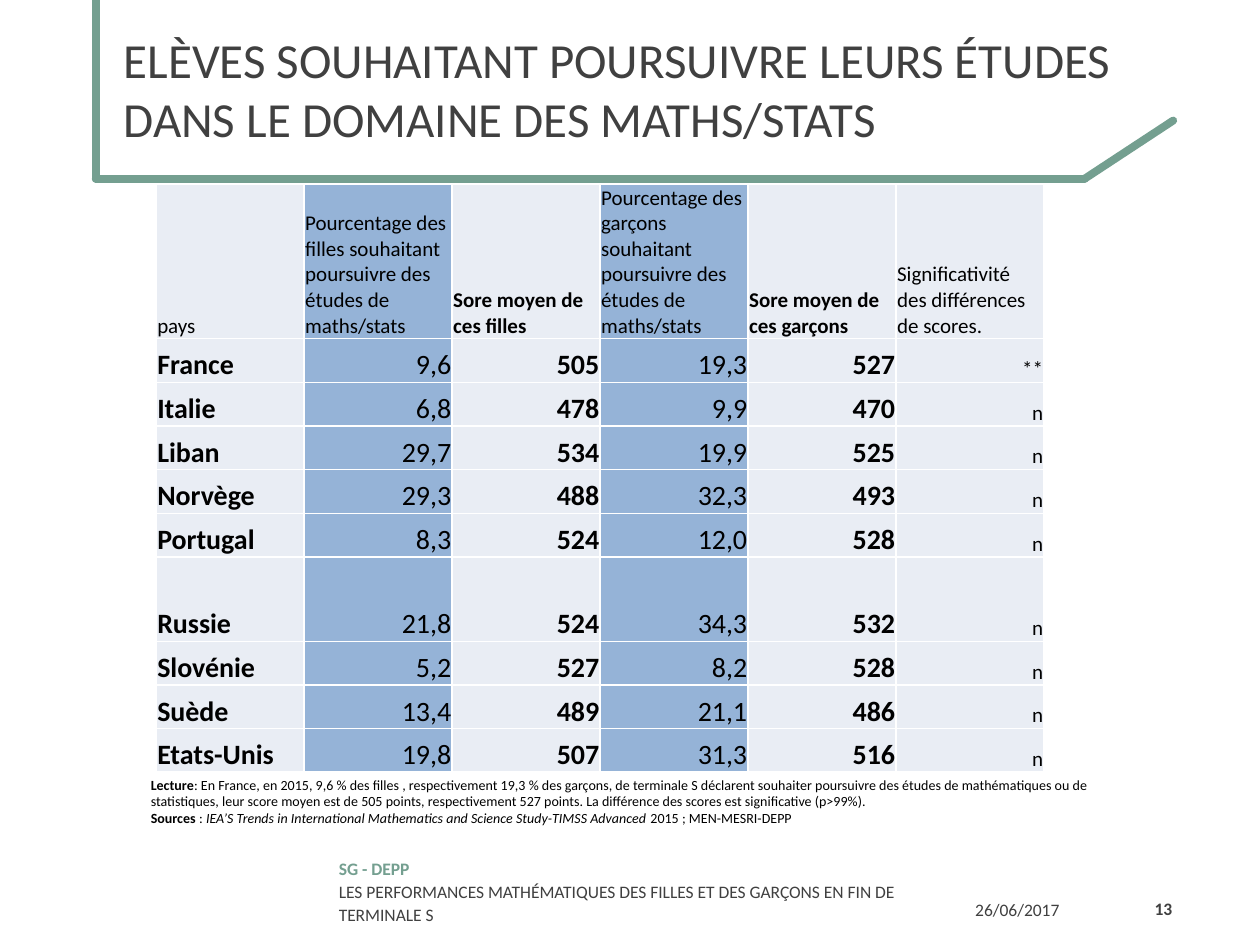
from lxml.etree import SubElement
from pptx import Presentation
from pptx.dml.color import RGBColor
from pptx.enum.shapes import MSO_CONNECTOR
from pptx.enum.text import MSO_ANCHOR, MSO_AUTO_SIZE, PP_ALIGN
from pptx.oxml.ns import qn
from pptx.util import Cm, Pt

COLORS = {
    "accent": "749F90",
    "grey": "404040",
    "black": "000000",
    "white": "FFFFFF",
    "pale": "E9EDF4",
    "blue": "95B3D7",
}
FONT = "Calibri"
TITLE = "ELÈVES SOUHAITANT POURSUIVRE LEURS ÉTUDES DANS LE DOMAINE DES MATHS/STATS"

HEADERS = [
    "pays",
    "Pourcentage des filles souhaitant poursuivre des études de maths/stats",
    "Sore moyen de ces filles",
    "Pourcentage des garçons souhaitant poursuivre des études de maths/stats",
    "Sore moyen de ces garçons",
    "Significativité des différences de scores.",
]
COUNTRIES = [
    ("France", "9,6", "505", "19,3", "527", "**"),
    ("Italie", "6,8", "478", "9,9", "470", "n"),
    ("Liban", "29,7", "534", "19,9", "525", "n"),
    ("Norvège", "29,3", "488", "32,3", "493", "n"),
    ("Portugal", "8,3", "524", "12,0", "528", "n"),
    ("Russie", "21,8", "524", "34,3", "532", "n"),
    ("Slovénie", "5,2", "527", "8,2", "528", "n"),
    ("Suède", "13,4", "489", "21,1", "486", "n"),
    ("Etats-Unis", "19,8", "507", "31,3", "516", "n"),
]
READING = (
    ": En France, en 2015, 9,6 % des filles , respectivement 19,3 % des garçons, "
    "de terminale S déclarent souhaiter poursuivre des études de mathématiques ou de "
    "statistiques, leur score moyen est de 505 points, respectivement 527 points. "
    "La différence des scores est significative (p>99%)."
)
STUDY = "IEA’S Trends in International Mathematics and Science Study-TIMSS Advanced"

PERCENT_COLUMNS = (1, 3)
SCORE_COLUMNS = (2, 4)
SIGNIFICANCE_COLUMN = 5


def color(name):
    return RGBColor.from_string(COLORS[name])


def write(paragraph, text, size=10, ink="grey", bold=False, italic=False,
          align=PP_ALIGN.LEFT, spacing=None):
    """Add one formatted run to a paragraph."""
    paragraph.alignment = align
    if spacing:
        paragraph.line_spacing = Pt(spacing)
    run = paragraph.add_run()
    run.text = text
    run.font.name = FONT
    run.font.size = Pt(size)
    run.font.bold = bold
    run.font.italic = italic
    run.font.color.rgb = color(ink)


def add_frame(slide, left, top, width, height, anchor=MSO_ANCHOR.MIDDLE):
    box = slide.shapes.add_textbox(Cm(left), Cm(top), Cm(width), Cm(height))
    frame = box.text_frame
    frame.word_wrap = True
    frame.vertical_anchor = anchor
    return frame


def add_title(slide, left, top, width, height):
    title = slide.shapes.title
    title.left, title.top = Cm(left), Cm(top)
    title.width, title.height = Cm(width), Cm(height)
    frame = title.text_frame
    frame.auto_size = MSO_AUTO_SIZE.NONE
    frame.vertical_anchor = MSO_ANCHOR.MIDDLE
    write(frame.paragraphs[0], TITLE, size=28)


def add_title_rule(slide, left, top, width, height):
    """Left edge, baseline and rising tail around the title."""
    tail_width, tail_rise = 1.78, 1.17
    corner = left + width - tail_width
    bottom = top + height
    points = [(left, top), (left, bottom), (corner, bottom),
              (left + width, bottom - tail_rise)]
    for (x1, y1), (x2, y2) in zip(points, points[1:]):
        rule = slide.shapes.add_connector(
            MSO_CONNECTOR.STRAIGHT, Cm(x1), Cm(y1), Cm(x2), Cm(y2))
        rule.line.color.rgb = color("accent")
        rule.line.width = Pt(4.5)
        properties = rule._element.spPr
        properties.find(qn("a:ln")).set("cap", "rnd")
        SubElement(properties, qn("a:effectLst"))


def style_cell(cell, fill):
    cell.vertical_anchor = MSO_ANCHOR.BOTTOM
    cell.margin_left = cell.margin_right = cell.margin_top = Cm(0.02)
    cell.margin_bottom = 0
    properties = cell._tc.get_or_add_tcPr()
    for side in ("lnL", "lnR", "lnT", "lnB"):
        border = SubElement(properties, qn(f"a:{side}"), w=str(Pt(1)))
        ink = SubElement(border, qn("a:solidFill"))
        SubElement(ink, qn("a:srgbClr"), val=COLORS["white"])
    cell.fill.solid()
    cell.fill.fore_color.rgb = color(fill)


def add_country_table(slide, left, top, width):
    header_height, row_height, russia_height = 3.11, 0.88, 1.7
    heights = [header_height] + [
        russia_height if row[0] == "Russie" else row_height for row in COUNTRIES]
    table = slide.shapes.add_table(
        len(heights), len(HEADERS), Cm(left), Cm(top), Cm(width), Cm(sum(heights))).table
    table.first_row = table.horz_banding = False
    for row, height in zip(table.rows, heights):
        row.height = Cm(height)
    for r, values in enumerate([HEADERS] + COUNTRIES):
        for c, value in enumerate(values):
            header = r == 0
            cell = table.cell(r, c)
            style_cell(cell, "blue" if c in PERCENT_COLUMNS else "pale")
            write(cell.text_frame.paragraphs[0], value, ink="black",
                  size=12 if header or c == SIGNIFICANCE_COLUMN else 16,
                  bold=c in SCORE_COLUMNS or (c == 0 and not header),
                  align=PP_ALIGN.LEFT if header or c == 0 else PP_ALIGN.RIGHT)


def add_notes_below_table(slide, left, top, width, height):
    frame = add_frame(slide, left, top, width, height, MSO_ANCHOR.TOP)
    note = {"size": 8, "ink": "black"}
    reading = frame.paragraphs[0]
    write(reading, "Lecture", bold=True, **note)
    write(reading, READING, **note)
    sources = frame.add_paragraph()
    write(sources, "Sources ", bold=True, **note)
    write(sources, ": ", **note)
    write(sources, STUDY, italic=True, **note)
    write(sources, " 2015 ; MEN-MESRI-DEPP", **note)


def add_footer(slide, left, top, width, height):
    text_width, date_width, small_height = 12.83, 3.22, 1.02
    small_top = top + height - small_height

    # Department and publication
    publication = add_frame(slide, left, top, text_width, height)
    write(publication.paragraphs[0], "SG - DEPP", ink="accent", bold=True, spacing=13.2)
    write(publication.add_paragraph(),
          "LES PERFORMANCES MATHÉMATIQUES DES FILLES ET DES GARÇONS EN FIN DE TERMINALE S",
          spacing=13.2)

    # Date and page number
    date_left = left + text_width
    date = add_frame(slide, date_left, small_top, date_width, small_height)
    write(date.paragraphs[0], "26/06/2017", spacing=13.2)
    number_left = date_left + date_width
    number = add_frame(slide, number_left, small_top,
                       left + width - number_left, small_height)
    write(number.paragraphs[0], "13", bold=True, align=PP_ALIGN.RIGHT)


def main():
    deck = Presentation()
    deck.slide_width, deck.slide_height = Cm(25.4), Cm(19.05)
    slide = deck.slides.add_slide(deck.slide_layouts[5])
    add_title_rule(slide, 1.93, 0, 21.72, 3.6)
    add_title(slide, 2.24, 0, 21.9, 3.58)
    add_country_table(slide, 3.15, 3.71, 17.9)
    add_notes_below_table(slide, 2.79, 15.52, 20.75, 1.27)
    add_footer(slide, 6.58, 17.07, 17.3, 1.75)
    deck.save("out.pptx")


if __name__ == "__main__":
    main()
